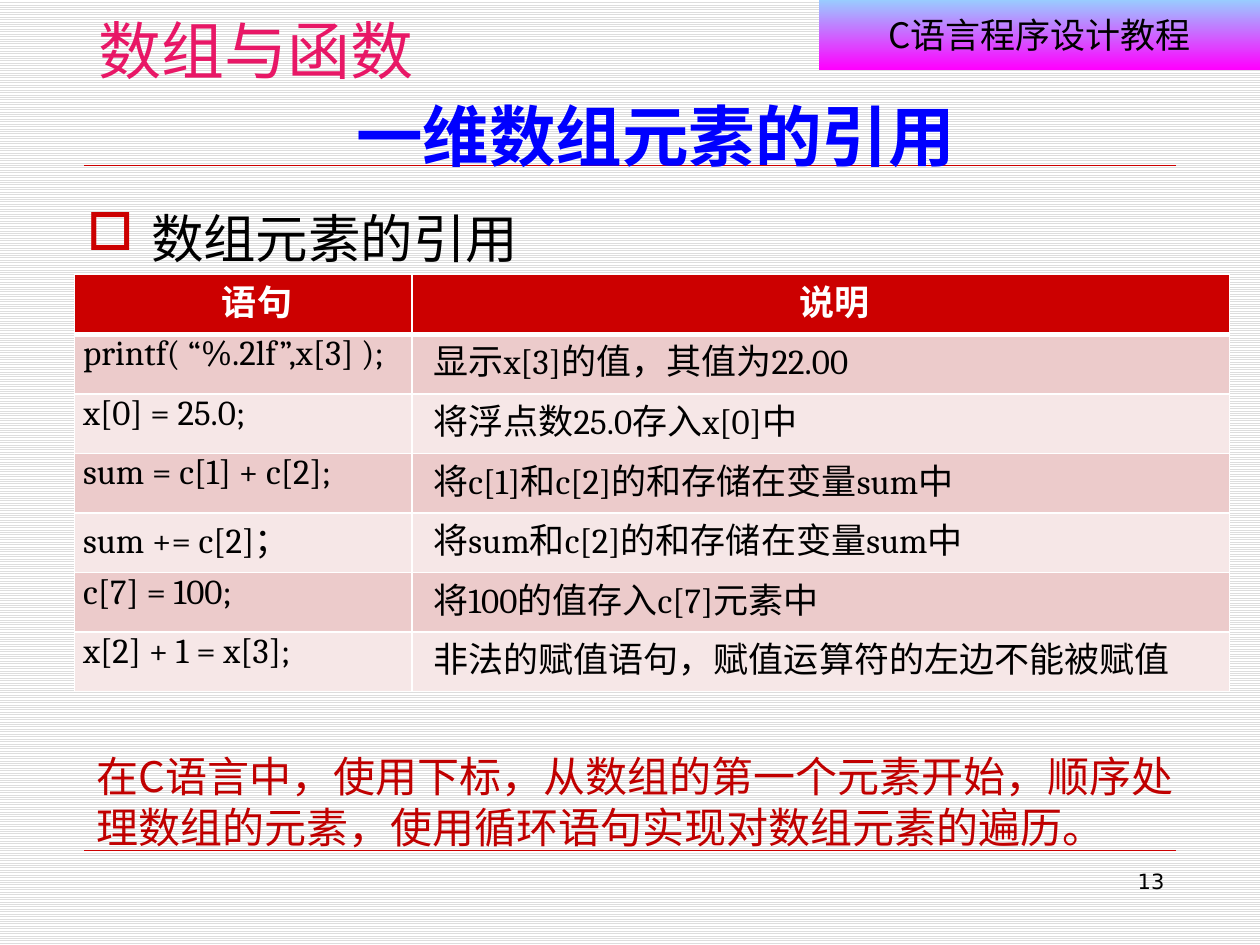
from lxml import etree
from pptx import Presentation
from pptx.dml.color import RGBColor
from pptx.enum import dml, shapes, text
from pptx.oxml import ns
from pptx.util import Inches, Pt

JP = "Noto Sans CJK JP"
SC = "Noto Sans CJK SC"
SANS = "DejaVu Sans"
ALIGN = text.PP_ALIGN
ROWS = [
    ("语句", "说明"),
    ("printf( “%.2lf”,x[3] );", "显示x[3]的值，其值为22.00"),
    ("x[0] = 25.0;", "将浮点数25.0存入x[0]中"),
    ("sum = c[1] + c[2];", "将c[1]和c[2]的和存储在变量sum中"),
    ("sum += c[2]；", "将sum和c[2]的和存储在变量sum中"),
    ("c[7] = 100;", "将100的值存入c[7]元素中"),
    ("x[2] + 1 = x[3];", "非法的赋值语句，赋值运算符的左边不能被赋值"),
]


def rgb(code):
    return RGBColor.from_string(code)


def sub(node, tag, **attrs):
    return etree.SubElement(node, ns.qn(tag), attrs)


def style(par, size, face, color, bold=False, asian=JP):
    """Format the runs, with a second face for Chinese."""
    for run in par.runs:
        font = run.font
        font.size, font.name, font.bold = Pt(size), face, bold
        font.color.rgb = rgb(color)
        sub(font._element, "a:ea", typeface=asian)


def add_text(slide, box, words, size, face, color, align=ALIGN.LEFT,
             bold=False, wrap=True, low=False):
    """Text with lines 1.2 em high, set a little low in its box."""
    frame = slide.shapes.add_textbox(*map(Inches, box)).text_frame
    frame.word_wrap = wrap
    frame.text = words
    drop = Pt(size * 0.09)
    frame.margin_top = Inches(0.05) + drop
    frame.margin_bottom = max(0, Inches(0.05) - drop)
    if low:
        frame.vertical_anchor = text.MSO_ANCHOR.BOTTOM
    par = frame.paragraphs[0]
    par.alignment = align
    par.line_spacing = Pt(size * 1.2)
    style(par, size, face, color, bold)
    return par


def add_bullet(par, mark, color, indent):
    props = par._p.get_or_add_pPr()
    props.set("marL", str(Inches(indent)))
    props.set("indent", str(-Inches(indent)))
    sub(sub(props, "a:buClr"), "a:srgbClr", val=color)
    sub(props, "a:buChar", char=mark)


def add_rule(slide, y):
    rule = slide.shapes.add_connector(
        shapes.MSO_CONNECTOR.STRAIGHT,
        Inches(0.67), Inches(y), Inches(9.33), Inches(y))
    rule.line.color.rgb = rgb("CC0000")
    rule.line.width = Pt(0.25)
    sub(rule._element.spPr, "a:effectLst")


def add_banner(slide, words):
    banner = slide.shapes.add_shape(
        shapes.MSO_SHAPE.RECTANGLE,
        Inches(6.5), 0, Inches(3.5), Inches(0.55))
    banner.shadow.inherit = False
    banner.line.fill.background()
    banner.fill.gradient()
    banner.fill.gradient_angle = 270
    for stop, color in zip(banner.fill.gradient_stops, ("99CCFF", "FF00FF")):
        stop.color.rgb = rgb(color)
    frame = banner.text_frame
    frame.text = words
    frame.vertical_anchor = text.MSO_ANCHOR.MIDDLE
    par = frame.paragraphs[0]
    par.alignment = ALIGN.CENTER
    style(par, 20, SC, "000000", asian=SC)


def set_edges(cell, top, bottom):
    props = cell._tc.get_or_add_tcPr()
    edges = {"a:lnL": 1, "a:lnR": 1, "a:lnT": top, "a:lnB": bottom}
    for spot, (tag, width) in enumerate(edges.items()):
        edge = etree.Element(ns.qn(tag), w=str(Pt(width)))
        sub(sub(edge, "a:solidFill"), "a:srgbClr", val="FFFFFF")
        props.insert(spot, edge)


def fill_cell(cell, words, row, col):
    head = row == 0
    cell.text = words
    cell.margin_left = cell.margin_right = Inches(0.07)
    cell.margin_top = cell.margin_bottom = 0
    cell.fill.solid()
    band = "ECCBCB" if row % 2 else "F6E7E7"
    cell.fill.fore_color.rgb = rgb("CC0000" if head else band)
    set_edges(cell, 3 if row == 1 else 1, 3 if head else 1)
    par = cell.text_frame.paragraphs[0]
    if head:
        par.alignment = ALIGN.CENTER
    elif col:
        par.alignment = ALIGN.JUSTIFY
    indent = 0.22 if head else 0.1 * col
    par._p.get_or_add_pPr().set("marL", str(Inches(indent)))
    style(par, 20, "Cambria", "FFFFFF" if head else "000000", head, SC)


def add_grid(slide):
    high = Inches(3.31)
    grid = slide.shapes.add_table(
        len(ROWS), 2, Inches(0.59), Inches(2.18), Inches(9.17), high).table
    for col, width in zip(grid.columns, (2.68, 6.49)):
        col.width = Inches(width)
    for r, pair in enumerate(ROWS):
        grid.rows[r].height = high // len(ROWS)
        for c, words in enumerate(pair):
            fill_cell(grid.cell(r, c), words, r, c)


def main():
    deck = Presentation()
    deck.slide_width, deck.slide_height = Inches(10), Inches(7.5)
    slide = deck.slides.add_slide(deck.slide_layouts[6])
    back = slide.background.fill
    back.patterned()
    back.pattern = dml.MSO_PATTERN.LIGHT_HORIZONTAL
    back.fore_color.rgb = rgb("DDDDDD")
    back.back_color.rgb = rgb("FFFFFF")

    add_rule(slide, 6.75)
    add_banner(slide, "C语言程序设计教程")
    add_text(slide, (0.2, 0, 3.66, 0.41), "数组与函数", 36, JP, "E81766",
             ALIGN.CENTER, wrap=False)
    add_rule(slide, 1.31)
    topic = add_text(slide, (0.59, 1.55, 8.75, 0.55), "数组元素的引用",
                     30, JP, "000000")
    add_bullet(topic, "□", "CC0000", 0.51)
    add_text(slide, (0.83, 0.65, 8.75, 0.74), "一维数组元素的引用",
             38, SANS, "0000FF", ALIGN.CENTER, bold=True, low=True)
    add_text(slide, (7.17, 6.83, 2.17, 0.52), "13", 12, SANS, "000000",
             ALIGN.RIGHT)
    add_grid(slide)
    add_text(slide, (0.67, 5.88, 8.82, 0.9),
             "在C语言中，使用下标，从数组的第一个元素开始，顺序处理数组的元素，"
             "使用循环语句实现对数组元素的遍历。", 24, JP, "C00000")
    deck.save("out.pptx")


if __name__ == "__main__":
    main()
